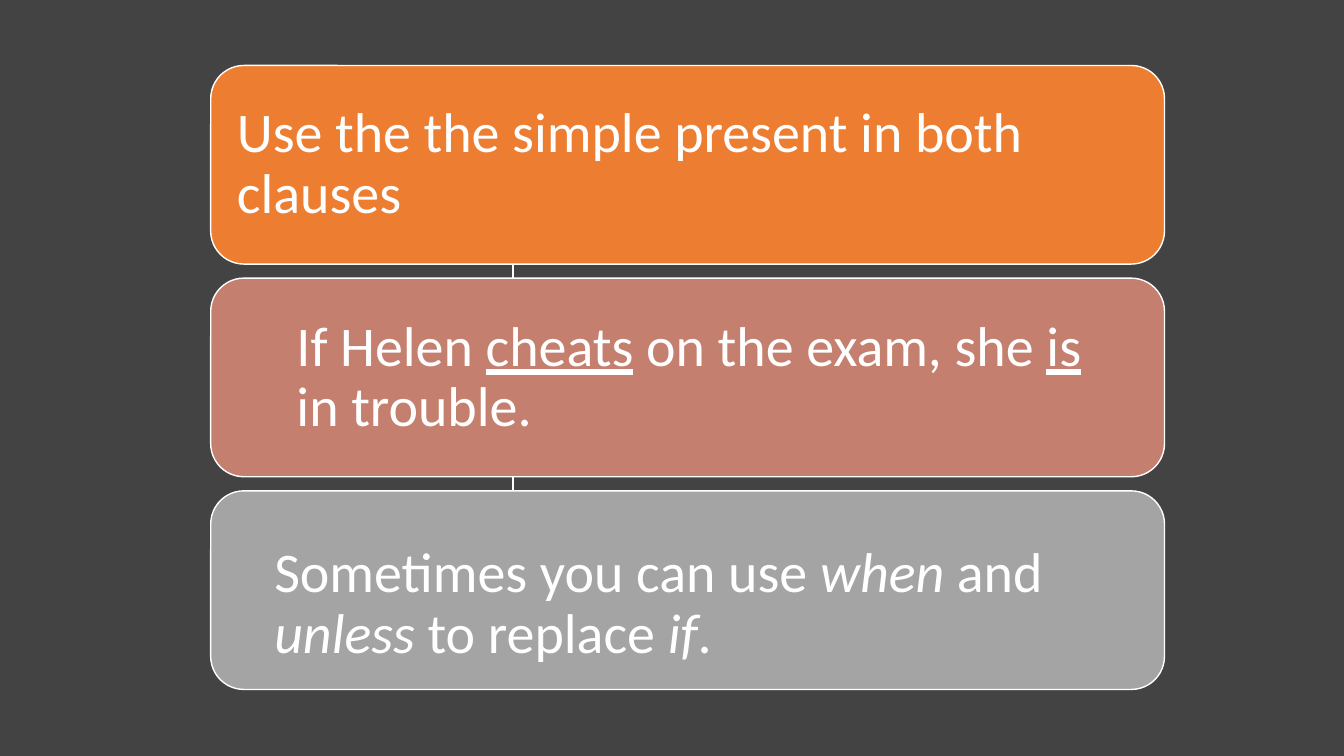
"""Build a slide of three stacked cards on the use of the simple present."""
from lxml.etree import SubElement
from pptx import Presentation
from pptx.dml.color import RGBColor
from pptx.enum.shapes import MSO_CONNECTOR, MSO_SHAPE
from pptx.enum.text import MSO_ANCHOR, PP_ALIGN
from pptx.oxml.ns import qn
from pptx.util import Pt

PX = 9144
WHITE = "FFFFFF"


def paint(fmt, color):
    """Give a fill or line format a solid colour."""
    fmt.solid()
    fmt.fore_color.rgb = RGBColor.from_string(color)


prs = Presentation()
prs.slide_width, prs.slide_height = 1333 * PX, 750 * PX
s = prs.slides.add_slide(prs.slide_layouts[6])
paint(s.background.fill, "000000")

backdrop = s.shapes.add_shape(MSO_SHAPE.RECTANGLE, 0, 0, prs.slide_width, prs.slide_height)
backdrop.shadow.inherit = False
paint(backdrop.fill, "434343")
backdrop.line.fill.background()

link = s.shapes.add_connector(MSO_CONNECTOR.STRAIGHT, 509 * PX, 250 * PX, 509 * PX, 500 * PX)
paint(link.line.fill, WHITE)
link.line.width = Pt(1.25)
SubElement(link._element.spPr, qn("a:effectLst"))

CARD_LEFT, CARD_TOP, CARD_W, CARD_H, CARD_STEP = 209, 65, 946, 197, 211
cards = [
    ("ED7D31", (218, 65, 918, 197),
     [("Use the the simple present in both clauses", "")]),
    ("C47F6E", (277, 293, 829, 165),
     [("If Helen ", ""), ("cheats", "u"), (" on the exam, she ", ""),
      ("is ", "u"), ("in trouble.", "")]),
    ("A4A4A4", (255, 534, 888, 132),
     [("Sometimes you can use ", ""), ("when", "i"), (" and ", ""),
      ("unless", "i"), (" to replace ", ""), ("if", "i"), (".", "")]),
]

for i, (color, box, runs) in enumerate(cards):
    card = s.shapes.add_shape(
        MSO_SHAPE.ROUNDED_RECTANGLE, CARD_LEFT * PX,
        (CARD_TOP + i * CARD_STEP) * PX, CARD_W * PX, CARD_H * PX)
    card.shadow.inherit = False
    card.adjustments[0] = 0.167
    paint(card.fill, color)
    paint(card.line.fill, WHITE)
    card.line.width = Pt(1)

    tf = s.shapes.add_textbox(*(v * PX for v in box)).text_frame
    tf.word_wrap = True
    tf.vertical_anchor = MSO_ANCHOR.MIDDLE
    tf.margin_left = tf.margin_right = tf.margin_top = tf.margin_bottom = 17 * PX
    p = tf.paragraphs[0]
    p.alignment = PP_ALIGN.LEFT
    p.line_spacing = 0.9
    for text, style in runs:
        r = p.add_run()
        r.text = text
        r.font.name = "Calibri"
        r.font.size = Pt(40)
        r.font.underline = style == "u"
        r.font.italic = style == "i"
        paint(r.font.fill, WHITE)

prs.save("out.pptx")
